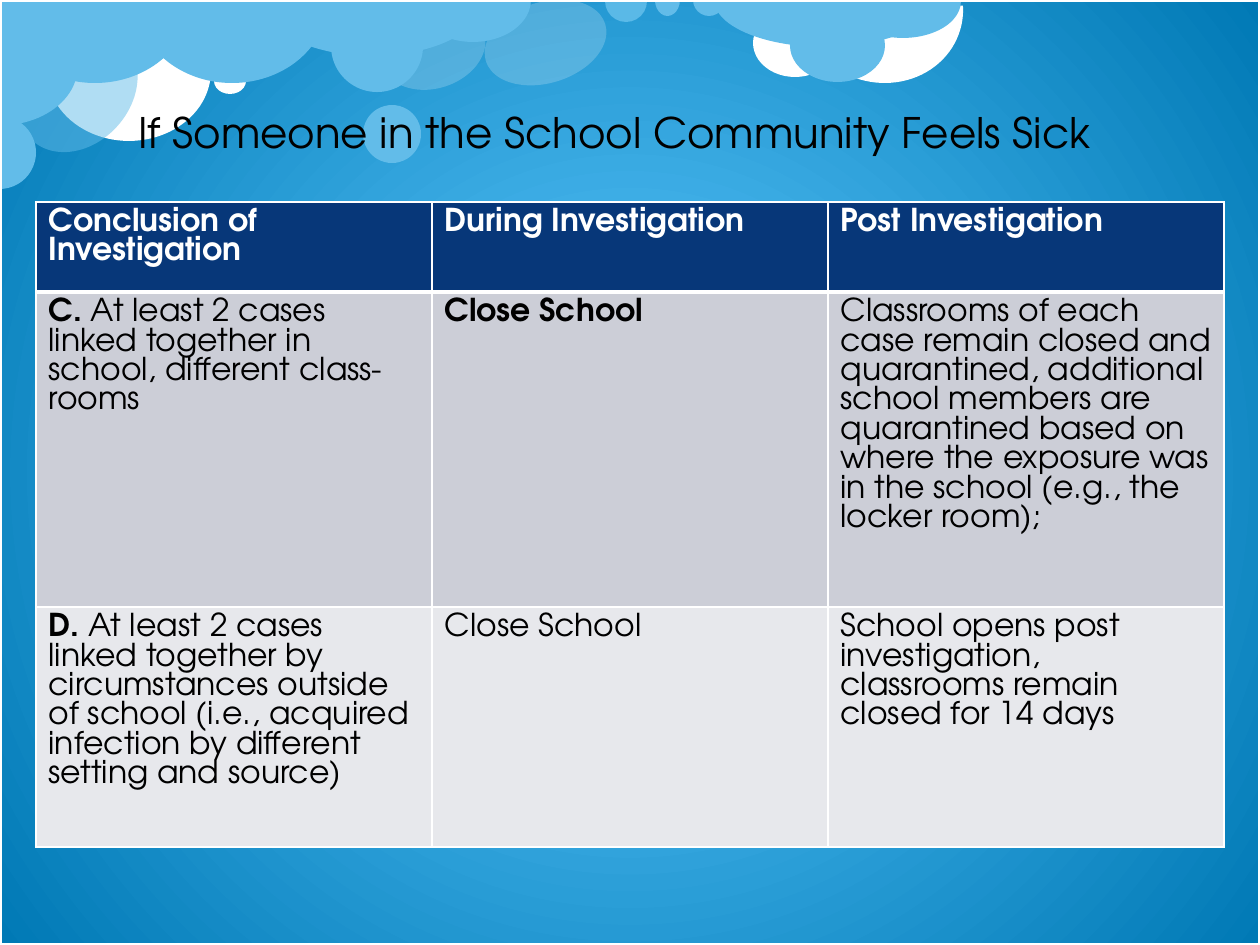
"""Build the school illness response slide: cloudy sky, title and investigation table."""
from lxml import etree
from pptx import Presentation, util as u
from pptx.dml.color import RGBColor
from pptx.enum import shapes, text
from pptx.oxml import ns

FONT = "TeX Gyre Adventor"
COLORS = {
    "sky_center": "5DC9FF", "sky_edge": "0079B5", "white": "FFFFFF", "black": "000000",
    "cloud": "62BCE9", "pale": "8FD9FB", "header": "073779", "row_c": "CCCED7", "row_d": "E7E8EC",
}
TITLE = "If Someone in the School Community Feels Sick"
TITLE_BOX = (116, 100, 997, 102)
TABLE_LEFT, TABLE_TOP, COLUMN_WIDTH = 36, 202, 396

ROWS = [
    {"height": 90, "fill": "header", "color": "white", "cells": [
        [("Conclusion of Investigation", True)],
        [("During Investigation", True)],
        [("Post Investigation", True)]]},
    {"height": 315, "fill": "row_c", "color": "black", "cells": [
        [("C. ", True), ("At least 2 cases linked together in school, different class-rooms", False)],
        [("Close School", True)],
        [("Classrooms of each case remain closed and quarantined, additional school members are "
          "quarantined based on where the exposure was in the school (e.g., the locker room);", False)]]},
    {"height": 240, "fill": "row_d", "color": "black", "cells": [
        [("D.", True), (" At least 2 cases linked together by circumstances outside of school "
                        "(i.e., acquired infection by different setting and source)", False)],
        [("Close School", False)],
        [("School opens post investigation, classrooms remain closed for 14 days", False)]]},
]

OVAL, PIE, ARC = shapes.MSO_SHAPE.OVAL, shapes.MSO_SHAPE.PIE, shapes.MSO_SHAPE.ARC
ANGLES = {PIE: (0, 108), ARC: (151.8, 44.48)}
CLOUDS = [
    (OVAL, (392, -6, 81, 108), "white", 20, 72.8),
    (OVAL, (47, 1, 164, 140), "white", 100, 0),
    (ARC, (805, -76, 152, 165), "white", 100, 106.5),
    (OVAL, (753, 9, 84, 68), "white", 100, 0),
    (PIE, (-1, -83, 192, 166), "cloud", 100, 0),
    (PIE, (262, -55, 221, 111), "cloud", 100, 0),
    (OVAL, (363, 105, 58, 58), "cloud", 100, 0),
    (OVAL, (24, 23, 107, 135), "cloud", 50, 41.8),
    (PIE, (-37, 116, 73, 73), "cloud", 100, 270),
    (OVAL, (214, 68, 32, 26), "white", 100, 0),
    (PIE, (136, -83, 192, 166), "cloud", 100, 0),
    (PIE, (714, -48, 221, 95), "cloud", 100, 0),
    (OVAL, (790, 9, 95, 73), "cloud", 100, 0),
    (PIE, (845, -35, 116, 73), "cloud", 100, 0),
    (OVAL, (505, -20, 81, 125), "white", 20, 72.8),
    (PIE, (605, -20, 42, 42), "pale", 50, 0),
    (PIE, (655, -16, 25, 32), "cloud", 100, 0),
    (PIE, (693, -16, 32, 32), "cloud", 100, 0),
    (OVAL, (331, 0, 92, 92), "cloud", 100, 0),
    (PIE, (415, -42, 116, 84), "cloud", 100, 0),
    (PIE, (-59, -11, 117, 156), "cloud", 100, 270),
]


def px(length):
    return u.Emu(round(length * 914400 / 126))


def place(box):
    return [px(length) for length in box]


def rgb(name):
    return RGBColor.from_string(COLORS[name])


def add_sky(slide):
    sky = slide.background.fill
    sky.gradient()
    for stop, name, position in zip(sky.gradient_stops, ("sky_center", "sky_edge"), (0, 1)):
        stop.color.rgb = rgb(name)
        stop.position = position
    gradient = slide.background._cSld.find(".//" + ns.qn("a:gradFill"))
    gradient.remove(gradient.find(ns.qn("a:lin")))
    circle = etree.SubElement(gradient, ns.qn("a:path"), path="circle")
    etree.SubElement(circle, ns.qn("a:fillToRect"), l="50000", t="50000", r="50000", b="50000")


def add_cloud(slide, preset, box, color, opacity, rotation):
    cloud = slide.shapes.add_shape(preset, *place(box))
    cloud.shadow.inherit = False
    cloud.rotation = rotation
    for index, angle in enumerate(ANGLES.get(preset, ())):
        cloud.adjustments[index] = angle
    cloud.fill.solid()
    cloud.fill.fore_color.rgb = rgb(color)
    cloud.line.fill.background()
    if opacity < 100:
        tint = cloud._element.spPr.find(".//" + ns.qn("a:srgbClr"))
        etree.SubElement(tint, ns.qn("a:alpha"), val=str(opacity * 1000))


def add_frame(slide):
    frame = slide.shapes.add_shape(shapes.MSO_SHAPE.RECTANGLE, *place((0, 0, 1260, 945)))
    frame.shadow.inherit = False
    frame.fill.background()
    frame.line.color.rgb = rgb("white")
    frame.line.width = u.Pt(2)


def style(font, size, color):
    font.name, font.size, font.color.rgb = FONT, u.Pt(size), rgb(color)


def add_title(slide):
    title = slide.shapes.add_textbox(*place(TITLE_BOX)).text_frame
    title.word_wrap = False
    title.text = TITLE
    title.paragraphs[0].alignment = text.PP_ALIGN.CENTER
    style(title.paragraphs[0].font, 24, "black")


def add_borders(cell, bottom):
    properties = cell._tc.get_or_add_tcPr()
    for index, (side, points) in enumerate((("L", 1), ("R", 1), ("T", 1), ("B", bottom))):
        border = etree.Element(ns.qn("a:ln" + side), w=str(u.Pt(points)))
        fill = etree.SubElement(border, ns.qn("a:solidFill"))
        etree.SubElement(fill, ns.qn("a:srgbClr"), val=COLORS["white"])
        properties.insert(index, border)


def add_investigations(slide):
    columns = len(ROWS[0]["cells"])
    box = (TABLE_LEFT, TABLE_TOP, columns * COLUMN_WIDTH, sum(row["height"] for row in ROWS))
    table = slide.shapes.add_table(len(ROWS), columns, *place(box)).table
    for column in table.columns:
        column.width = px(COLUMN_WIDTH)
    for r, row in enumerate(ROWS):
        table.rows[r].height = px(row["height"])
        for c, parts in enumerate(row["cells"]):
            cell = table.cell(r, c)
            cell.fill.solid()
            cell.fill.fore_color.rgb = rgb(row["fill"])
            add_borders(cell, 3 if r == 0 else 1)
            paragraph = cell.text_frame.paragraphs[0]
            style(paragraph.font, 18, row["color"])
            for words, bold in parts:
                run = paragraph.add_run()
                run.text, run.font.bold = words, bold


def main():
    deck = Presentation()
    deck.slide_width, deck.slide_height = px(1260), px(945)
    slide = deck.slides.add_slide(deck.slide_layouts[6])
    add_sky(slide)
    for cloud in CLOUDS:
        add_cloud(slide, *cloud)
    add_frame(slide)
    add_title(slide)
    add_investigations(slide)
    deck.save("out.pptx")


if __name__ == "__main__":
    main()
